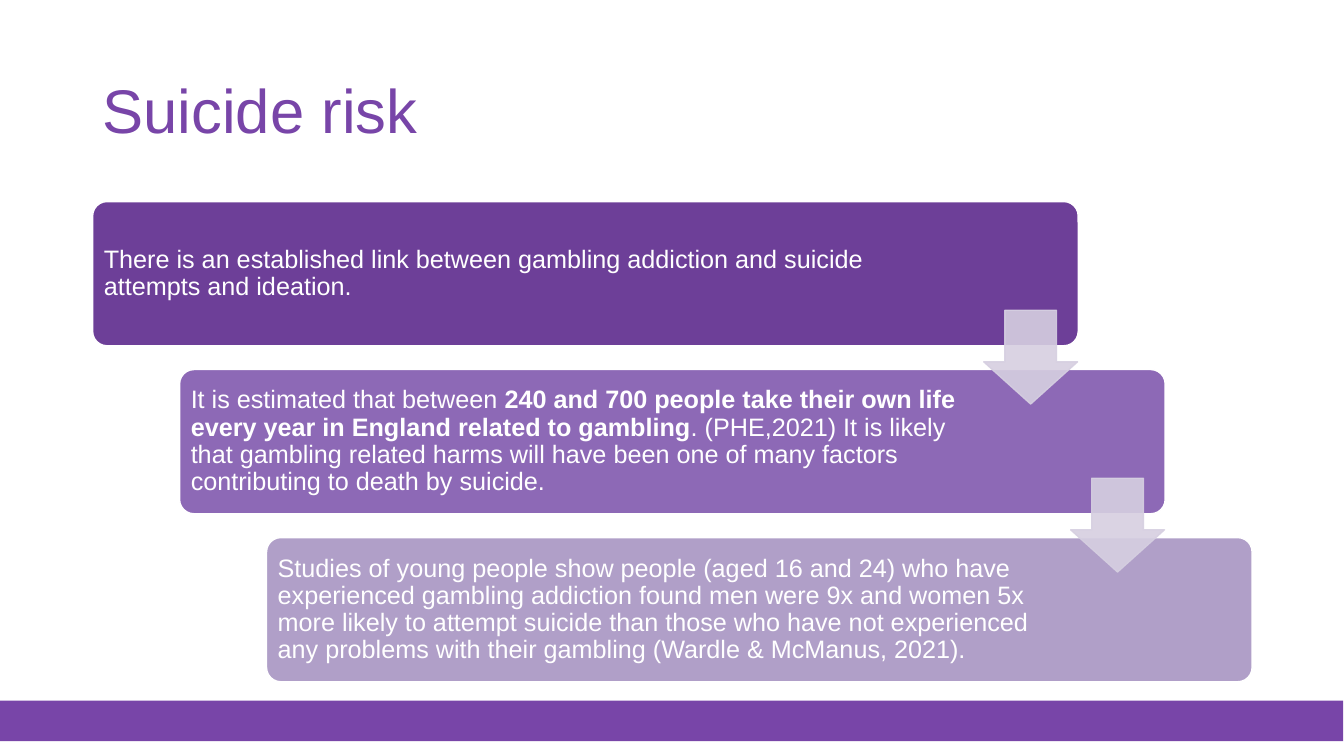
from lxml import etree
from pptx import Presentation
from pptx.dml.color import RGBColor
from pptx.enum.shapes import MSO_SHAPE
from pptx.enum.text import MSO_ANCHOR
from pptx.oxml.ns import qn
from pptx.util import Pt

RECT = MSO_SHAPE.RECTANGLE
ROUNDED = MSO_SHAPE.ROUNDED_RECTANGLE
DOWN_ARROW = MSO_SHAPE.DOWN_ARROW
MIDDLE = MSO_ANCHOR.MIDDLE

FONT = "Arial"
PURPLE = "7845A8"
WHITE = "FFFFFF"
ARROW_COLOR = "D6CFE1"

STEP_LEFT, STEP_TOP = 66.2, 144
STEP_WIDTH, STEP_HEIGHT = 704, 103
STEP_DX, STEP_DY = 62.1, 120
ARROW_LEFT, ARROW_TOP, ARROW_SIZE = 702.7, 221.6, 67
TEXT_INSET = 3

STEPS = [
    ("6D3F98", 592.6, [
        ("There is an established link between gambling addiction and suicide "
         "attempts and ideation.", False),
    ]),
    ("8D69B6", 568.8, [
        ("It is estimated that between ", False),
        ("240 and 700 people take their own life every year in England "
         "related to gambling", True),
        (". (PHE,2021) It is likely that gambling related harms will have been "
         "one of many factors contributing to death by suicide.", False),
    ]),
    ("B09FC8", 568.8, [
        ("Studies of young people show people (aged 16 and 24) who have "
         "experienced gambling addiction found men were 9x and women 5x more "
         "likely to attempt suicide than those who have not experienced any "
         "problems with their gambling (Wardle & McManus, 2021).", False),
    ]),
]


def rgb(color):
    return RGBColor.from_string(color)


def add_box(slide, kind, left, top, width, height, fill, line=None, adjustments=()):
    sp = slide.shapes.add_shape(kind, Pt(left), Pt(top), Pt(width), Pt(height))
    sp.shadow.inherit = False
    sp.fill.solid()
    sp.fill.fore_color.rgb = rgb(fill)
    if line:
        sp.line.color.rgb = rgb(line)
        sp.line.width = Pt(1)
    else:
        sp.line.fill.background()
    for i, value in enumerate(adjustments):
        sp.adjustments[i] = value
    return sp


def set_opacity(sp, percent):
    for color in sp._element.spPr.iter(qn("a:srgbClr")):
        alpha = etree.SubElement(color, qn("a:alpha"))
        alpha.set("val", str(percent * 1000))


def add_text(slide, left, top, width, height, parts, size, color, insets):
    sp = slide.shapes.add_textbox(Pt(left), Pt(top), Pt(width), Pt(height))
    tf = sp.text_frame
    tf.word_wrap = True
    tf.vertical_anchor = MIDDLE
    tf.margin_left = tf.margin_right = Pt(insets[0])
    tf.margin_top = tf.margin_bottom = Pt(insets[1])
    p = tf.paragraphs[0]
    p.line_spacing = 0.9
    for text, bold in parts:
        r = p.add_run()
        r.text = text
        r.font.name = FONT
        r.font.size = Pt(size)
        r.font.bold = bold
        r.font.color.rgb = rgb(color)


def add_step(slide, i, fill, text_width, parts):
    left, top = STEP_LEFT + i * STEP_DX, STEP_TOP + i * STEP_DY
    add_box(slide, ROUNDED, left, top, STEP_WIDTH, STEP_HEIGHT, fill, WHITE, [0.1])
    add_text(slide, left + TEXT_INSET, top + TEXT_INSET, text_width,
             STEP_HEIGHT - 2 * TEXT_INSET, parts, 18, WHITE, (5, 5))


def add_arrow(slide, i):
    sp = add_box(slide, DOWN_ARROW, ARROW_LEFT + i * STEP_DX, ARROW_TOP + i * STEP_DY,
                 ARROW_SIZE, ARROW_SIZE, ARROW_COLOR, ARROW_COLOR, [0.55, 0.45])
    set_opacity(sp, 90)


def main():
    prs = Presentation()
    prs.slide_width, prs.slide_height = Pt(960), Pt(540)
    slide = prs.slides.add_slide(prs.slide_layouts[6])
    add_box(slide, RECT, -0.5, 500.4, 960, 29, PURPLE)
    add_text(slide, 66.2, 28.8, 643, 104.4, [("Suicide risk", False)], 44, PURPLE,
             (7.2, 3.6))
    for i, (fill, text_width, parts) in enumerate(STEPS):
        add_step(slide, i, fill, text_width, parts)
    for i in range(len(STEPS) - 1):
        add_arrow(slide, i)
    prs.save("out.pptx")


if __name__ == "__main__":
    main()
